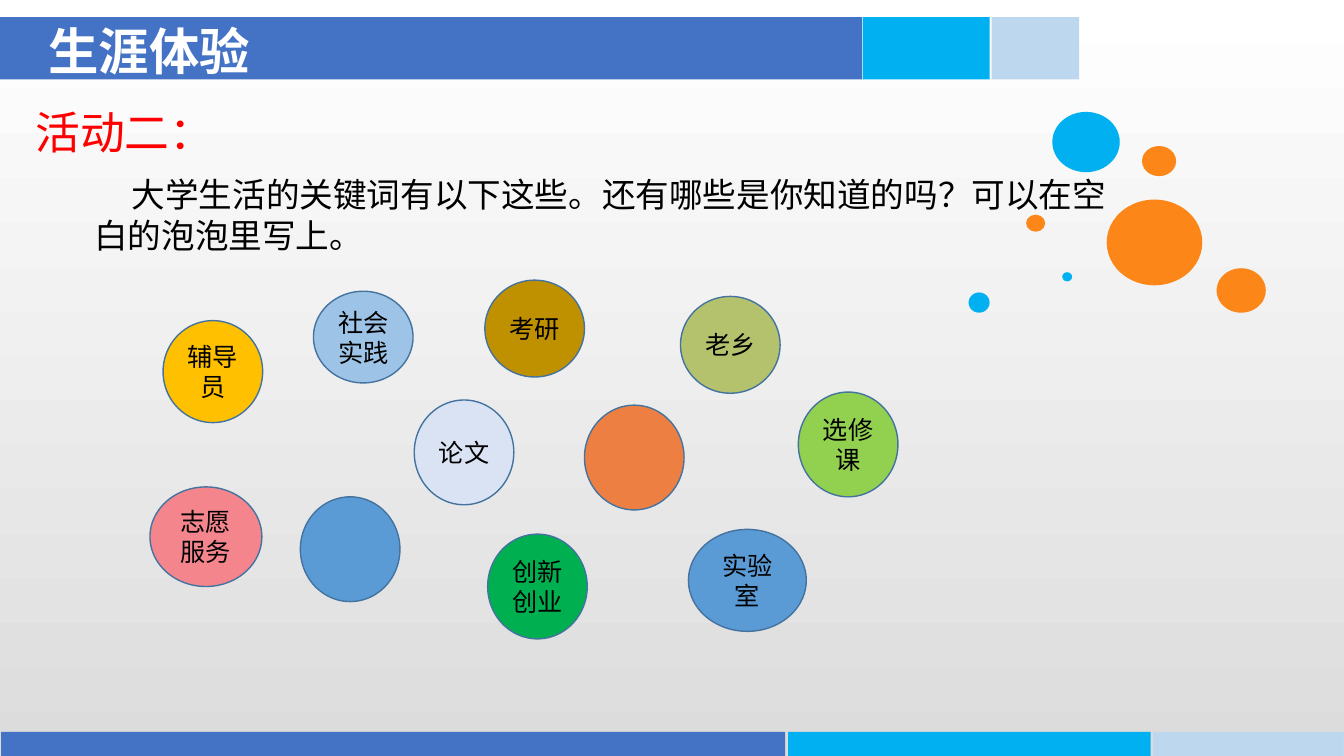
from lxml import etree
from pptx import Presentation
from pptx.dml.color import RGBColor
from pptx.enum.shapes import MSO_SHAPE
from pptx.enum.text import MSO_ANCHOR, MSO_AUTO_SIZE, PP_ALIGN
from pptx.oxml.ns import qn
from pptx.util import Cm, Pt

RECT, OVAL = MSO_SHAPE.RECTANGLE, MSO_SHAPE.OVAL
LEFT, MID = PP_ALIGN.LEFT, PP_ALIGN.CENTER
TOP, CENTER = MSO_ANCHOR.TOP, MSO_ANCHOR.MIDDLE
FIXED = MSO_AUTO_SIZE.NONE
TITLE_ONLY = 5

SANS, HAN = "Arial", "Noto Sans CJK SC"
NAVY, SKY, PALE, ORANGE = "4472C4", "00B0F0", "BDD7EE", "FC8618"
EDGE, BLACK, WHITE, RED = "43739E", "000000", "FFFFFF", "FF0000"

# Bars: left, width, colour
HEAD_BARS = [(0, 21.72, NAVY), (21.74, 3.2, SKY), (24.99, 2.21, PALE)]
FOOT_BARS = [(0.03, 19.76, NAVY), (19.86, 9.14, SKY), (29.06, 4.8, PALE)]

# Dots: left, top, width, height, colour
DOTS = [
    (24.41, 7.37, 0.53, 0.51, SKY),
    (27.89, 5.03, 2.41, 2.16, ORANGE),
    (26.52, 2.82, 1.7, 1.52, SKY),
    (30.66, 6.76, 1.24, 1.12, ORANGE),
    (28.78, 3.68, 0.86, 0.76, ORANGE),
    (25.86, 5.41, 0.48, 0.43, ORANGE),
    (26.77, 6.86, 0.25, 0.23, SKY),
]

# Bubbles: word, left, top, width, height, colour
BUBBLES = [
    ("辅导员", 4.11, 8.08, 2.51, 2.57, "FFC000"),
    ("老乡", 17.15, 7.47, 2.51, 2.44, "B4C26E"),
    ("选修课", 20.12, 9.88, 2.51, 2.64, "92D050"),
    ("创新创业", 12.29, 13.46, 2.51, 2.64, "00B050"),
    ("论文", 10.44, 10.08, 2.51, 2.64, "DAE3F3"),
    ("志愿服务", 3.78, 12.27, 2.82, 2.51, "F4858D"),
    ("社会实践", 7.9, 7.34, 2.51, 2.31, "9DC3E6"),
    ("考研", 12.22, 7.06, 2.51, 2.44, "BF9000"),
    ("实验室", 17.35, 13.34, 2.97, 2.57, "5B9BD5"),
    ("", 14.73, 10.21, 2.51, 2.64, "EE7F42"),
    ("", 7.57, 12.52, 2.51, 2.64, "5B9BD5"),
]


def color(code):
    return RGBColor.from_string(code)


def place(shape, left, top, width, height):
    shape.left, shape.top = Cm(left), Cm(top)
    shape.width, shape.height = Cm(width), Cm(height)


def write(shape, text, size, font, ink, align=LEFT, anchor=TOP, bold=False):
    frame = shape.text_frame
    frame.text = text
    frame.word_wrap = True
    frame.auto_size = FIXED
    frame.vertical_anchor = anchor
    para = frame.paragraphs[0]
    para.alignment = align
    for run in para.runs:
        run.font.name = font
        run.font.size = Pt(size)
        run.font.bold = bold
        run.font.color.rgb = color(ink)
        # Same face for Chinese characters
        east = etree.SubElement(run.font._element, qn("a:ea"))
        east.set("typeface", font)
    return para


def draw(shapes, kind, box, fill, edge=None):
    shape = shapes.add_shape(kind, *map(Cm, box))
    shape.shadow.inherit = False
    shape.fill.solid()
    shape.fill.fore_color.rgb = color(fill)
    if edge:
        shape.line.color.rgb = color(edge)
        shape.line.width = Pt(1)
    else:
        shape.line.fill.background()
    return shape


def shade(slide):
    fill = slide.background.fill
    fill.gradient()
    fill.gradient_angle = 270
    for stop, code in zip(fill.gradient_stops, (WHITE, "DCDCDC")):
        stop.color.rgb = color(code)


def bars(slide, items, top, height):
    for left, width, fill in items:
        draw(slide.shapes, RECT, (left, top, width, height), fill)


def label(slide, box, text, size, font, ink):
    shape = slide.shapes.add_textbox(*map(Cm, box))
    return write(shape, text, size, font, ink)


def main():
    deck = Presentation()
    deck.slide_width, deck.slide_height = Cm(33.87), Cm(19.05)
    slide = deck.slides.add_slide(deck.slide_layouts[TITLE_ONLY])

    # Backdrop
    shade(slide)
    bars(slide, HEAD_BARS, 0.43, 1.57)
    bars(slide, FOOT_BARS, 18.44, 0.61)
    group = slide.shapes.add_group_shape()
    for *box, fill in DOTS:
        draw(group.shapes, OVAL, box, fill)

    # Title, raised above the bars
    title = slide.shapes.title
    slide.shapes._spTree.append(title._element)
    place(title, 0.97, 0.61, 9.86, 1.3)
    write(title, "生涯体验", 36, HAN, WHITE, anchor=CENTER, bold=True)

    # Task
    label(slide, (0.64, 2.51, 19.53, 1.63), "活动二：", 32, SANS, RED)
    task = "大学生活的关键词有以下这些。还有哪些是你知道的吗？可以在空白的泡泡里写上。"
    para = label(slide, (2.13, 4.27, 26.34, 2.31), task, 24, HAN, BLACK)
    para.space_after = Pt(6)
    para._p.get_or_add_pPr().set("indent", str(Cm(0.94)))

    # Keyword bubbles
    for word, *box, fill in BUBBLES:
        bubble = draw(slide.shapes, OVAL, box, fill, EDGE)
        if word:
            write(bubble, word, 18, SANS, BLACK, MID, CENTER)

    deck.save("out.pptx")


if __name__ == "__main__":
    main()
